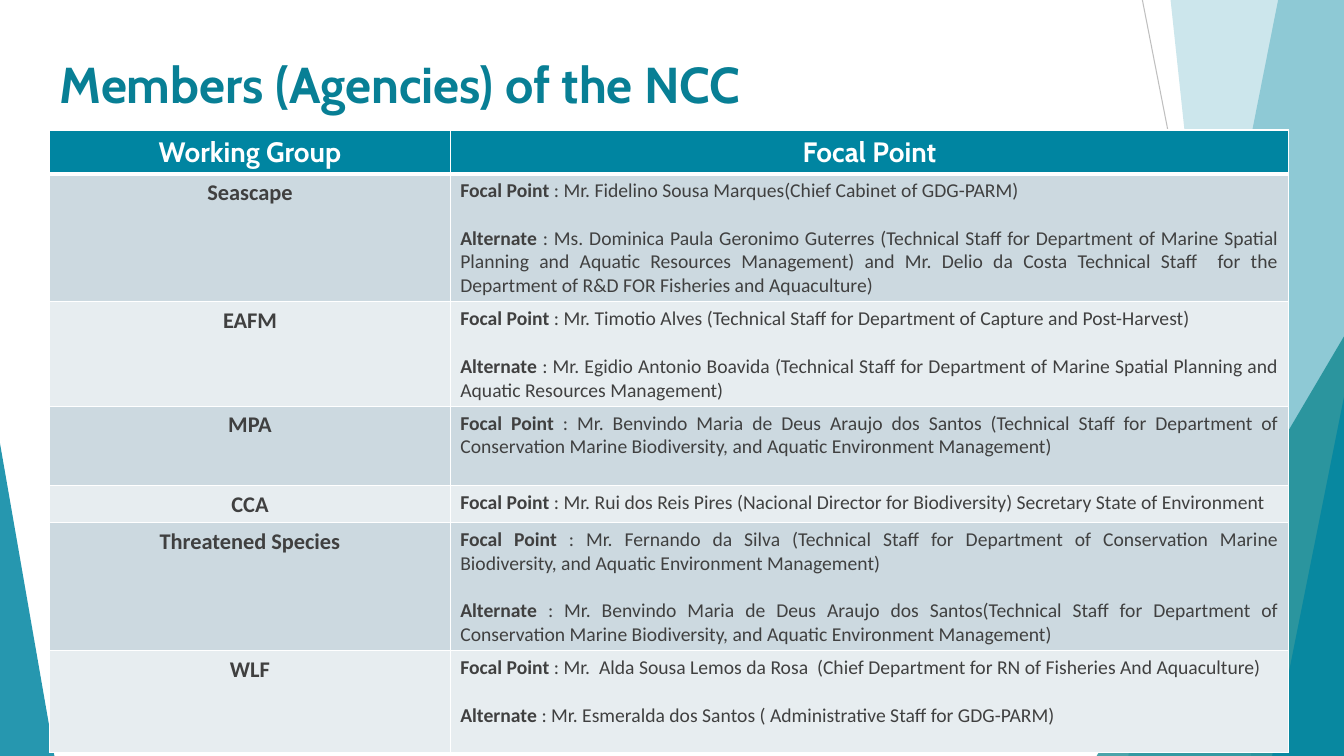
from lxml import etree
from pptx import Presentation
from pptx.dml.color import RGBColor
from pptx.enum.shapes import MSO_CONNECTOR, MSO_SHAPE
from pptx.enum.text import MSO_ANCHOR, PP_ALIGN
from pptx.oxml.ns import qn
from pptx.util import Inches, Pt

TRIANGLE = MSO_SHAPE.ISOSCELES_TRIANGLE
STRAIGHT = MSO_CONNECTOR.STRAIGHT
MIDDLE = MSO_ANCHOR.MIDDLE
LEFT, CENTER, JUSTIFY = PP_ALIGN.LEFT, PP_ALIGN.CENTER, PP_ALIGN.JUSTIFY

WIDTH, HEIGHT = Inches(13.33), Inches(7.5)
TEAL, DARK, WHITE = "0085A1", "404040", "FFFFFF"
BANDS = ["CCD9E0", "E7EDF0"]
COLUMNS = [29.8, 62.4]
ROWS = [5.6, 13.5, 13.5, 10.5, 4.8, 16.4, 13.5]
LINE_GAP = 17

# Working group, alignment of its text, focal point, alternate
GROUPS = [
    ("Seascape", JUSTIFY, "Mr. Fidelino Sousa Marques(Chief Cabinet of GDG-PARM)",
     "Ms. Dominica Paula Geronimo Guterres (Technical Staff for Department of Marine "
     "Spatial Planning and Aquatic Resources Management) and Mr. Delio da Costa "
     "Technical Staff  for the Department of R&D FOR Fisheries and Aquaculture)"),
    ("EAFM", JUSTIFY,
     "Mr. Timotio Alves (Technical Staff for Department of Capture and Post-Harvest)",
     "Mr. Egidio Antonio Boavida (Technical Staff for Department of Marine Spatial "
     "Planning and Aquatic Resources Management)"),
    ("MPA", JUSTIFY,
     "Mr. Benvindo Maria de Deus Araujo dos Santos (Technical Staff for Department of "
     "Conservation Marine Biodiversity, and Aquatic Environment Management)", None),
    ("CCA", LEFT,
     "Mr. Rui dos Reis Pires (Nacional Director for Biodiversity) Secretary State of "
     "Environment", None),
    ("Threatened Species", JUSTIFY,
     "Mr. Fernando da Silva (Technical Staff for Department of Conservation Marine "
     "Biodiversity, and Aquatic Environment Management)",
     "Mr. Benvindo Maria de Deus Araujo dos Santos(Technical Staff for Department of "
     "Conservation Marine Biodiversity, and Aquatic Environment Management)"),
    ("WLF", LEFT,
     "Mr.  Alda Sousa Lemos da Rosa  (Chief Department for RN of Fisheries And "
     "Aquaculture)",
     "Mr. Esmeralda dos Santos ( Administrative Staff for GDG-PARM)"),
]


def rgb(color):
    return RGBColor.from_string(color)


def across(percent):
    return round(WIDTH * percent / 100)


def down(percent):
    return round(HEIGHT * percent / 100)


def box(left, top, width, height):
    return across(left), down(top), across(width), down(height)


def style_run(r, size, font, color, bold=True):
    r.font.size, r.font.name, r.font.bold = Pt(size), font, bold
    r.font.color.rgb = rgb(color)


def fill_shape(sp, color, opacity):
    sp.shadow.inherit = False
    sp.line.fill.background()
    sp.fill.solid()
    sp.fill.fore_color.rgb = rgb(color)
    clr = sp.fill._xPr.find(qn("a:solidFill"))[0]
    etree.SubElement(clr, qn("a:alpha"), val=str(opacity * 1000))


def add_panel(s, points, opacity):
    corners = [(across(x), down(y)) for x, y in points]
    builder = s.shapes.build_freeform(*corners[0])
    builder.add_line_segments(corners[1:], close=True)
    fill_shape(builder.convert_to_shape(), TEAL, opacity)


def add_wedge(s, place, apex, color, opacity):
    sp = s.shapes.add_shape(TRIANGLE, *box(*place))
    sp.adjustments[0] = apex
    fill_shape(sp, color, opacity)


def add_thin_line(s, x1, x2):
    sp = s.shapes.add_connector(STRAIGHT, across(x1), 0, across(x2), HEIGHT)
    sp.line.color.rgb = rgb("BFBFBF")
    sp.line.width = Pt(0.75)
    etree.SubElement(sp._element.spPr, qn("a:effectLst"))


def add_title(s, text):
    tf = s.shapes.add_textbox(*box(3.7, 6, 86.25, 11.2)).text_frame
    tf.word_wrap = True
    tf.vertical_anchor = MIDDLE
    tf.text = text
    p = tf.paragraphs[0]
    p.line_spacing = 0.9
    style_run(p.runs[0], 36, "Cabin", "087F95")


def style_cell(cell, color, bottom=1):
    # Borders come before the fill in the cell properties
    tcPr = cell._tc.get_or_add_tcPr()
    for side, width in zip("LRTB", (1, 1, 1, bottom)):
        ln = etree.SubElement(tcPr, qn("a:ln" + side), w=str(Pt(width)))
        solid = etree.SubElement(ln, qn("a:solidFill"))
        etree.SubElement(solid, qn("a:srgbClr"), val=WHITE)
    cell.fill.solid()
    cell.fill.fore_color.rgb = rgb(color)


def write_label(cell, text, size, font, color):
    cell.text = text
    p = cell.text_frame.paragraphs[0]
    p.alignment = CENTER
    style_run(p.runs[0], size, font, color)


def write_people(cell, align, focal, alternate):
    tf = cell.text_frame
    p = tf.paragraphs[0]
    for role, person in (("Focal Point ", focal), ("Alternate ", alternate)):
        if not person:
            continue
        if p.runs:
            p = tf.add_paragraph()
            p.space_before = Pt(LINE_GAP)
        p.alignment = align
        for text, bold in ((role, True), (": " + person, False)):
            r = p.add_run()
            r.text = text
            style_run(r, 14, "Calibri", DARK, bold)


def add_members_table(s):
    place = box(3.7, 17.2, sum(COLUMNS), sum(ROWS))
    table = s.shapes.add_table(len(ROWS), len(COLUMNS), *place).table
    for column, width in zip(table.columns, COLUMNS):
        column.width = across(width)
    for row, height in zip(table.rows, ROWS):
        row.height = down(height)
    # Header row
    for i, heading in enumerate(("Working Group", "Focal Point")):
        style_cell(table.cell(0, i), TEAL, bottom=3)
        write_label(table.cell(0, i), heading, 20, "Cabin", WHITE)
    # One banded row per working group
    for i, (group, align, focal, alternate) in enumerate(GROUPS):
        name, people = table.cell(i + 1, 0), table.cell(i + 1, 1)
        for cell in (name, people):
            style_cell(cell, BANDS[i % 2])
        write_label(name, group, 16, "Calibri", DARK)
        write_people(people, align, focal, alternate)


def main():
    prs = Presentation()
    prs.slide_width, prs.slide_height = WIDTH, HEIGHT
    s = prs.slides.add_slide(prs.slide_layouts[6])
    # Angular backdrop
    add_panel(s, [(95.1, 0), (100, 0), (100, 100), (83.95, 100)], 30)
    add_thin_line(s, 85, 96)
    add_panel(s, [(87.1, 0), (100, 0), (100, 100), (93.1, 100)], 20)
    add_wedge(s, (81.6, 44.5, 18.4, 55.5), 1, "06828A", 72)
    add_wedge(s, (94.65, 52.5, 5.35, 47.5), 1, TEAL, 80)
    add_wedge(s, (0, 58.65, 4.05, 41.35), 0, TEAL, 85)
    # Content
    add_title(s, "Members (Agencies) of the NCC")
    add_members_table(s)
    prs.save("out.pptx")


if __name__ == "__main__":
    main()
